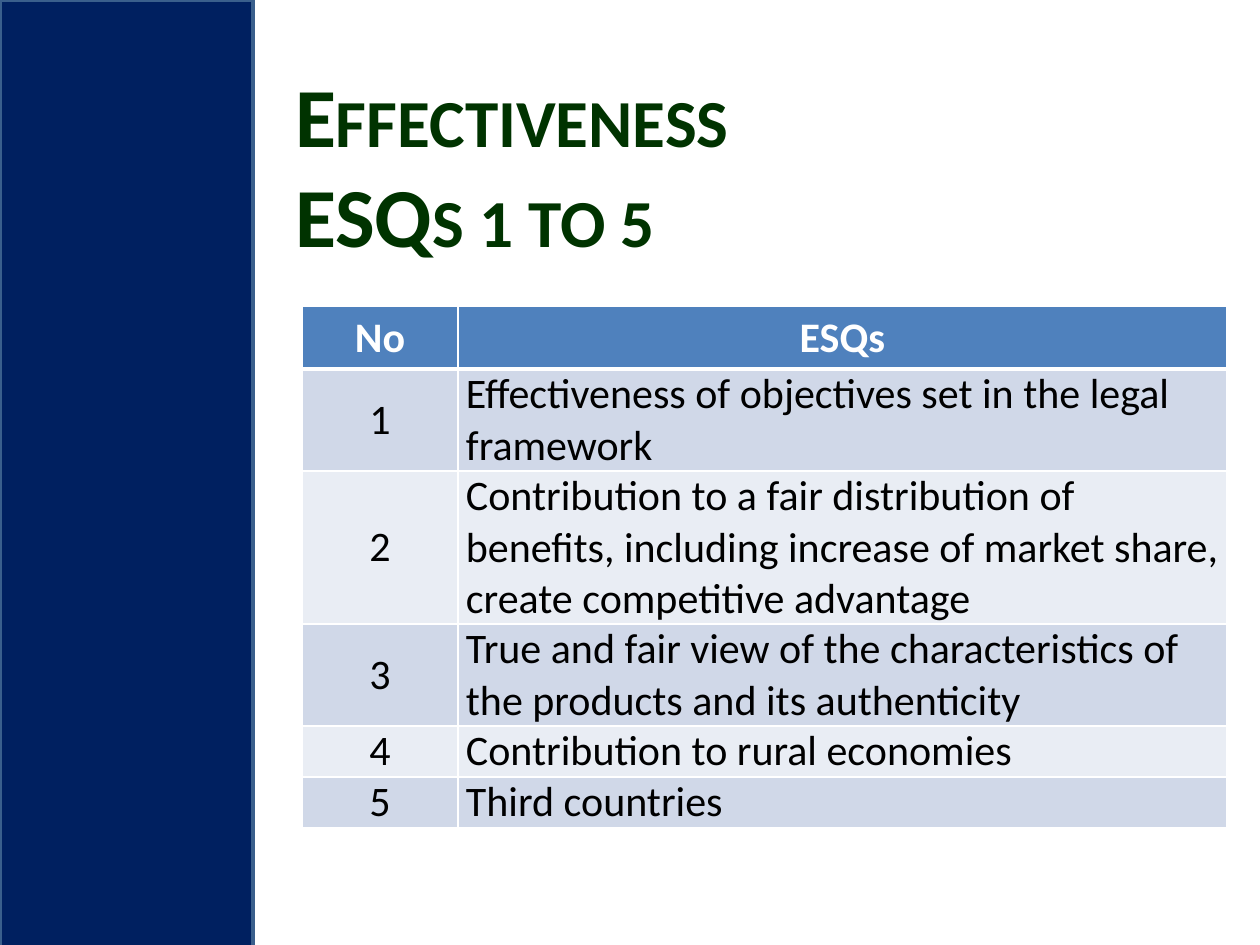
from lxml.etree import SubElement
from pptx import Presentation
from pptx.dml.color import RGBColor
from pptx.enum.shapes import MSO_SHAPE as Shape
from pptx.enum.text import MSO_ANCHOR as Anchor, PP_ALIGN as Align
from pptx.oxml.ns import qn
from pptx.util import Emu, Pt

PX_PER_INCH = 126
FONT = "Calibri"
WHITE = "FFFFFF"
HEADER_FILL = "4F81BD"
BAND_FILLS = ["D0D8E8", "E9EDF4"]

COLUMN_WIDTHS = [156, 769]
HEADERS = ["No", "ESQs"]
HEADER_HEIGHT = 63
LINE_HEIGHT = 51
# Question text and the number of lines it takes
QUESTIONS = [
    ("Effectiveness of objectives set in the legal framework", 2),
    ("Contribution to a fair distribution of benefits, including increase "
     "of market share, create competitive advantage", 3),
    ("True and fair view of the characteristics of the products and its "
     "authenticity", 2),
    ("Contribution to rural economies", 1),
    ("Third countries", 1),
]


def px(length):
    return Emu(round(length * 914400 / PX_PER_INCH))


def color(value):
    return RGBColor.from_string(value)


def set_font(font, size, value, bold=False):
    formats = {"name": FONT, "size": Pt(size), "bold": bold}
    for name, setting in formats.items():
        setattr(font, name, setting)
    font.color.rgb = color(value)


def set_margins(target, horizontal, vertical):
    margins = {"margin_left": horizontal, "margin_right": horizontal,
               "margin_top": vertical, "margin_bottom": vertical}
    for name, length in margins.items():
        setattr(target, name, px(length))


def add_sidebar(slide):
    sidebar = slide.shapes.add_shape(Shape.RECTANGLE, 0, 0, px(253), px(947))
    sidebar.shadow.inherit = False
    sidebar.fill.solid()
    sidebar.fill.fore_color.rgb = color("002060")
    sidebar.line.color.rgb = color("3A5F8C")
    sidebar.line.width = Pt(2)


def add_title(slide, text):
    box = slide.shapes.add_textbox(px(282), px(45), px(926), px(238))
    frame = box.text_frame
    frame.word_wrap = True
    frame.vertical_anchor = Anchor.MIDDLE
    set_margins(frame, 13, 6)
    paragraph = frame.paragraphs[0]
    paragraph.text = text
    for run in paragraph.runs:
        set_font(run.font, 48, "003300", bold=True)
        run.font._element.set("cap", "small")


def set_borders(cell, bottom_width):
    properties = cell._tc.get_or_add_tcPr()
    widths = {"a:lnL": 1, "a:lnR": 1, "a:lnT": 1, "a:lnB": bottom_width}
    for tag, width in widths.items():
        line = SubElement(properties, qn(tag), w=str(Pt(width)))
        fill = SubElement(line, qn("a:solidFill"))
        SubElement(fill, qn("a:srgbClr"), val=WHITE)


def fill_cell(cell, text, fill, align, header=False):
    set_borders(cell, 3 if header else 1)
    cell.fill.solid()
    cell.fill.fore_color.rgb = color(fill)
    if not header:
        set_margins(cell, 8, 0)
        cell.vertical_anchor = Anchor.MIDDLE
    paragraph = cell.text_frame.paragraphs[0]
    paragraph.alignment = align
    run = paragraph.add_run()
    run.text = text
    set_font(run.font, 24, WHITE if header else "000000", bold=header)


def add_question_table(slide):
    heights = [HEADER_HEIGHT] + [LINE_HEIGHT * lines for _, lines in QUESTIONS]
    table = slide.shapes.add_table(
        len(heights), len(COLUMN_WIDTHS), px(302), px(306),
        px(sum(COLUMN_WIDTHS)), px(sum(heights))).table
    for column, width in zip(table.columns, COLUMN_WIDTHS):
        column.width = px(width)
    for row, height in zip(table.rows, heights):
        row.height = px(height)

    # Header row
    for index, text in enumerate(HEADERS):
        fill_cell(table.cell(0, index), text, HEADER_FILL, Align.CENTER,
                  header=True)

    # Numbered questions in alternating bands
    for number, (question, _) in enumerate(QUESTIONS, start=1):
        fill = BAND_FILLS[(number - 1) % 2]
        fill_cell(table.cell(number, 0), str(number), fill, Align.CENTER)
        fill_cell(table.cell(number, 1), question, fill, Align.LEFT)


def main():
    presentation = Presentation()
    presentation.slide_width = px(1260)
    presentation.slide_height = px(945)
    slide = presentation.slides.add_slide(presentation.slide_layouts[6])
    add_sidebar(slide)
    add_title(slide, "Effectiveness\vESQs 1 to 5")
    add_question_table(slide)
    presentation.save("out.pptx")


if __name__ == "__main__":
    main()
